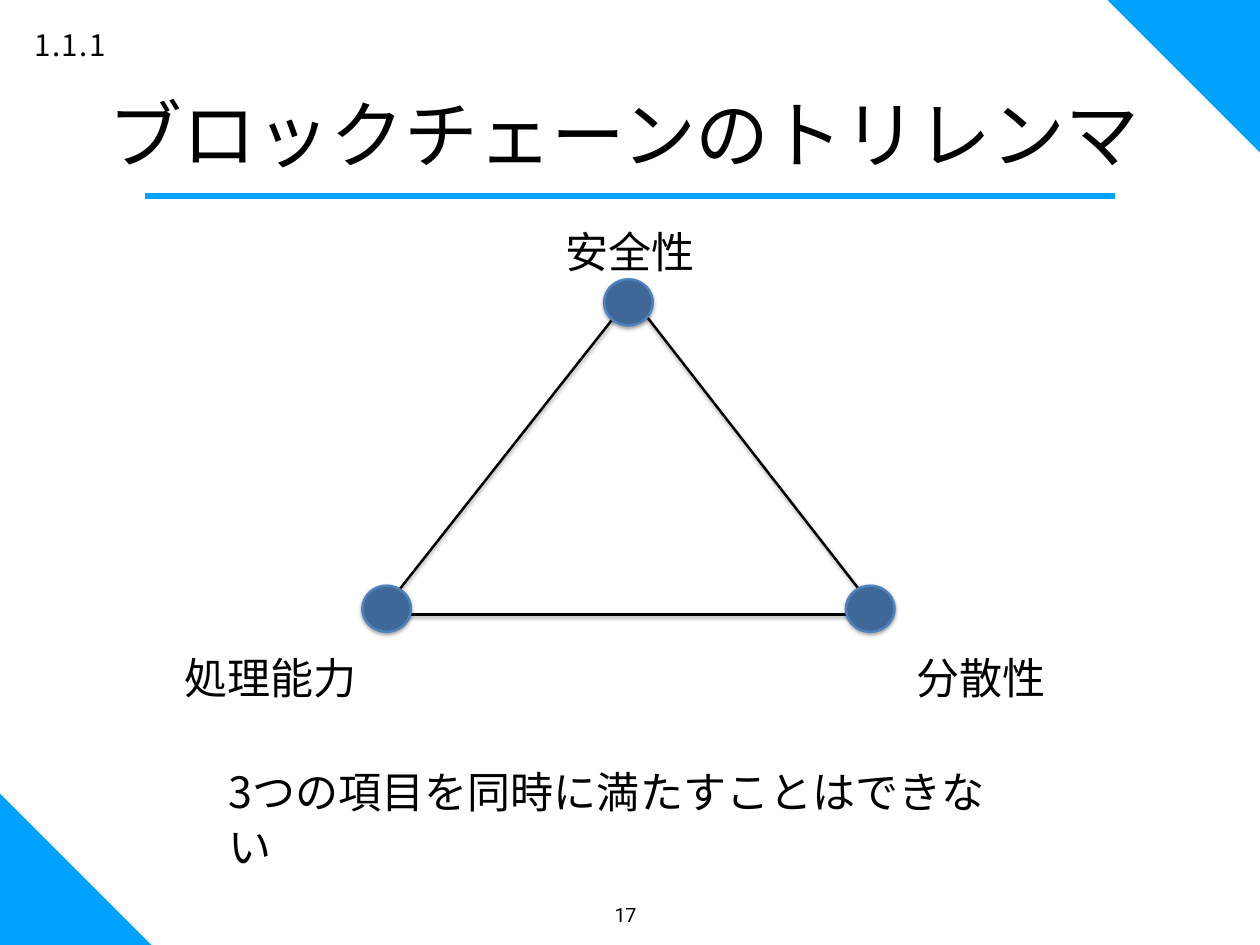
import lxml.etree
import pptx
import pptx.dml.color
import pptx.enum.shapes
import pptx.enum.text
import pptx.oxml.ns
import pptx.util

Pt = pptx.util.Pt
qn = pptx.oxml.ns.qn

COLORS = {
    "accent": "00A2FF",
    "text": "000000",
    "node": "3F6797",
    "node_line": "4F81BD",
}
BODY_FONT = "Noto Sans CJK JP"
NUMBER_FONT = "Roboto"
LINE_HEIGHT = 1.28  # line pitch as a share of the text size

WIDTH, HEIGHT = 1024, 768
TITLE = ("ブロックチェーンのトリレンマ", (88.5, 67, 963.5, 74))
SECTION = ("1.1.1", (28, 20, 66, 24))
PAGE = ("17", (499.5, 733.5, 21.5, 16))
CONCLUSION = ("3つの項目を同時に満たすことはできない", (182, 615.5, 656.5, 42.5))
LABELS = [
    ("安全性", (456, 177, 113, 42.5)),
    ("処理能力", (146, 523, 148.5, 42.5)),
    ("分散性", (741, 523, 113, 42.5)),
]
CORNERS = [
    [(0, HEIGHT - 123), (0, HEIGHT), (123, HEIGHT)],
    [(WIDTH, 0), (WIDTH - 124, 0), (WIDTH, 124)],
]
TITLE_RULE = ((118, 159), (906.5, 159))
EDGES = [
    ((325.5, 499.5), (697, 499.5)),
    ((521.5, 252), (704, 486.5)),
    ((318, 487.5), (504, 251.5)),
]
NODE_SIZE = (39.5, 37.5)
NODES = [(491, 227), (294.5, 476), (687.5, 476)]


def rgb(name):
    return pptx.dml.color.RGBColor.from_string(COLORS[name])


def set_effects(shape, shadow):
    """Give the shape a soft shadow below it, or no effect at all."""
    properties = shape._element.spPr
    effects = lxml.etree.SubElement(properties, qn("a:effectLst"))
    if shadow:
        outer = lxml.etree.SubElement(
            effects, qn("a:outerShdw"), blurRad=str(Pt(3)), dist=str(Pt(1.8)),
            dir="5400000", rotWithShape="0")
        color = lxml.etree.SubElement(outer, qn("a:srgbClr"), val=COLORS["text"])
        lxml.etree.SubElement(color, qn("a:alpha"), val="35000")


def write_text(shape, text, size=35, font=BODY_FONT, inset=0, wrap=True,
               grow=True, before=0, spacing=0):
    frame = shape.text_frame
    frame.margin_left = frame.margin_right = Pt(inset)
    frame.margin_top = frame.margin_bottom = Pt(inset)
    frame.vertical_anchor = pptx.enum.text.MSO_ANCHOR.TOP
    frame.word_wrap = wrap
    auto_size = pptx.enum.text.MSO_AUTO_SIZE
    frame.auto_size = auto_size.SHAPE_TO_FIT_TEXT if grow else auto_size.NONE
    paragraph = frame.paragraphs[0]
    paragraph.alignment = pptx.enum.text.PP_ALIGN.LEFT
    paragraph.space_before = Pt(before)
    if font == BODY_FONT:
        paragraph.line_spacing = Pt(round(size * LINE_HEIGHT, 1))
    run = paragraph.add_run()
    run.text = text
    run.font.size = Pt(size)
    run.font.name = font
    run.font.color.rgb = rgb("text")
    properties = run._r.get_or_add_rPr()
    lxml.etree.SubElement(properties, qn("a:ea"), typeface=font)
    if spacing:
        properties.set("spc", str(round(spacing * 100)))


def add_text(slide, text, box, **text_format):
    shape = slide.shapes.add_textbox(*map(Pt, box))
    write_text(shape, text, **text_format)


def add_line(slide, start, end, color, width, shadow=False):
    line = slide.shapes.add_connector(
        pptx.enum.shapes.MSO_CONNECTOR.STRAIGHT, *map(Pt, start + end))
    line.line.color.rgb = rgb(color)
    line.line.width = Pt(width)
    set_effects(line, shadow)


def add_corner(slide, points):
    builder = slide.shapes.build_freeform(*points[0], scale=Pt(1))
    builder.add_line_segments(points[1:], close=True)
    corner = builder.convert_to_shape()
    corner.fill.solid()
    corner.fill.fore_color.rgb = rgb("accent")
    corner.line.fill.background()
    corner.shadow.inherit = False


def add_node(slide, position):
    node = slide.shapes.add_shape(
        pptx.enum.shapes.MSO_SHAPE.OVAL, *map(Pt, position + NODE_SIZE))
    node.fill.solid()
    node.fill.fore_color.rgb = rgb("node")
    node.line.color.rgb = rgb("node_line")
    node.line.width = Pt(2)
    set_effects(node, shadow=True)


def main():
    presentation = pptx.Presentation()
    presentation.slide_width, presentation.slide_height = Pt(WIDTH), Pt(HEIGHT)
    slide = presentation.slides.add_slide(presentation.slide_layouts[5])

    for points in CORNERS:
        add_corner(slide, points)
    add_line(slide, *TITLE_RULE, color="accent", width=5)

    title = slide.shapes.title
    text, box = TITLE
    title.left, title.top, title.width, title.height = map(Pt, box)
    write_text(title, text, size=60, grow=False, before=1)
    add_text(slide, *PAGE, size=16, font=NUMBER_FONT, wrap=False, spacing=-0.1)
    add_text(slide, *SECTION, size=24, before=1, spacing=1.2)

    for start, end in EDGES:
        add_line(slide, start, end, color="text", width=2, shadow=True)
    for position in NODES:
        add_node(slide, position)
    for text, box in LABELS:
        add_text(slide, text, box, inset=3.6, wrap=False)
    add_text(slide, *CONCLUSION, inset=3.6)

    presentation.save("out.pptx")


if __name__ == "__main__":
    main()
